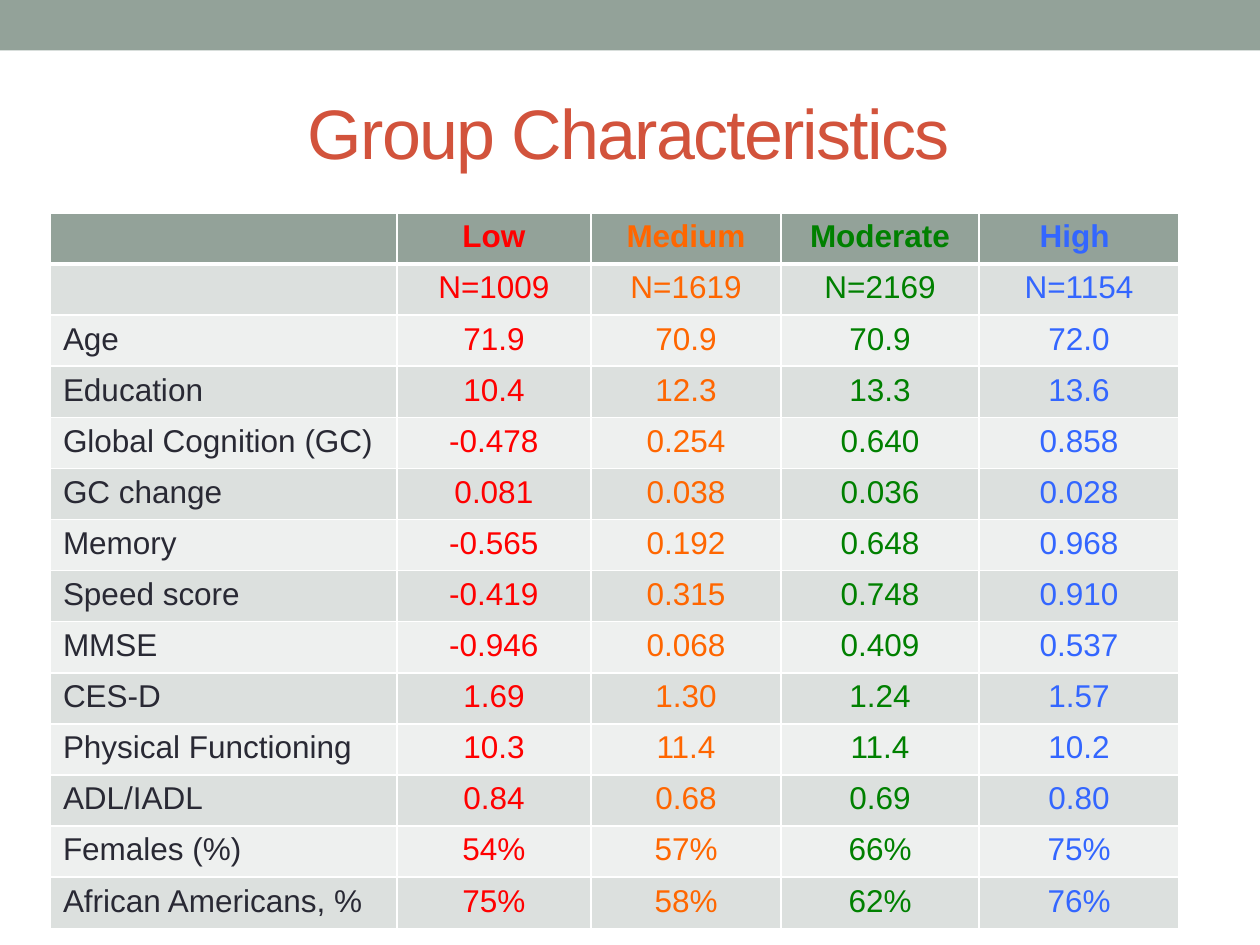
from dataclasses import dataclass

import lxml.etree
import pptx
import pptx.dml.color
import pptx.enum.shapes
import pptx.enum.text
import pptx.oxml.ns
import pptx.util
from pptx.util import Inches


@dataclass(frozen=True)
class Theme:
    font: str = "Arial"
    title_size: int = 40
    table_size: int = 18
    title: str = "D2533C"
    text: str = "292934"
    accent: str = "93A299"
    bands: tuple[str, str] = ("DCE0DE", "EEF0EF")
    border: str = "FFFFFF"
    border_width: float = 1
    header_border_width: float = 3


@dataclass(frozen=True)
class Column:
    heading: str
    width: float
    color: str


@dataclass(frozen=True)
class Measure:
    label: str
    values: tuple[str, str, str, str]


THEME = Theme()

COLUMNS = [
    Column("", 2.75, THEME.text),
    Column("Low", 1.54, "FF0000"),
    Column("Medium", 1.51, "FF6600"),
    Column("Moderate", 1.57, "008000"),
    Column("High ", 1.59, "3366FF"),
]

MEASURES = [
    Measure("", ("N=1009", "N=1619", "N=2169", "N=1154")),
    Measure("Age", ("71.9", "70.9", "70.9", "72.0")),
    Measure("Education", ("10.4", "12.3", "13.3", "13.6")),
    Measure("Global Cognition (GC)", ("-0.478", "0.254", "0.640", "0.858")),
    Measure("GC change", ("0.081", "0.038", "0.036", "0.028")),
    Measure("Memory", ("-0.565", "0.192", "0.648", "0.968")),
    Measure("Speed score", ("-0.419", "0.315", "0.748", "0.910")),
    Measure("MMSE", ("-0.946", "0.068", "0.409", "0.537")),
    Measure("CES-D", ("1.69", "1.30", "1.24", "1.57")),
    Measure("Physical Functioning", ("10.3", "11.4", "11.4", "10.2")),
    Measure("ADL/IADL", ("0.84", "0.68", "0.69", "0.80")),
    Measure("Females (%)", ("54%", "57%", "66%", "75%")),
    Measure("African Americans, %", ("75%", "58%", "62%", "76%")),
]


def rgb(color: str) -> pptx.dml.color.RGBColor:
    return pptx.dml.color.RGBColor.from_string(color)


def add_run(p, text: str, size: float, color: str, bold: bool = False):
    r = p.add_run()
    r.text = text
    r.font.name = THEME.font
    r.font.size = pptx.util.Pt(size)
    r.font.bold = bold
    r.font.color.rgb = rgb(color)
    return r


def add_top_bar(slide) -> None:
    sp = slide.shapes.add_shape(
        pptx.enum.shapes.MSO_SHAPE.RECTANGLE, 0, 0, Inches(10), Inches(0.4)
    )
    sp.shadow.inherit = False
    sp.fill.solid()
    sp.fill.fore_color.rgb = rgb(THEME.accent)
    sp.line.fill.background()


def add_title(slide, text: str) -> None:
    sp = slide.shapes.add_textbox(Inches(0.49), Inches(0.5), Inches(9), Inches(1.08))
    tf = sp.text_frame
    tf.word_wrap = True
    tf.vertical_anchor = pptx.enum.text.MSO_ANCHOR.MIDDLE
    p = tf.paragraphs[0]
    p.alignment = pptx.enum.text.PP_ALIGN.CENTER
    r = add_run(p, text, THEME.title_size, THEME.title)
    r.font._element.set("spc", "-100")


def set_borders(cell, top: float, bottom: float) -> None:
    qn = pptx.oxml.ns.qn
    side = THEME.border_width
    widths = {"a:lnL": side, "a:lnR": side, "a:lnT": top, "a:lnB": bottom}
    tc_pr = cell._tc.get_or_add_tcPr()
    for i, (tag, width) in enumerate(widths.items()):
        ln = lxml.etree.Element(qn(tag), w=str(pptx.util.Pt(width)))
        fill = lxml.etree.SubElement(ln, qn("a:solidFill"))
        lxml.etree.SubElement(fill, qn("a:srgbClr"), val=THEME.border)
        tc_pr.insert(i, ln)


def fill_cell(cell, text: str, row: int, col: int) -> None:
    header = row == 0
    cell.fill.solid()
    cell.fill.fore_color.rgb = rgb(THEME.accent if header else THEME.bands[(row - 1) % 2])
    set_borders(
        cell,
        top=THEME.header_border_width if row == 1 else THEME.border_width,
        bottom=THEME.header_border_width if header else THEME.border_width,
    )
    if text:
        p = cell.text_frame.paragraphs[0]
        if col > 0:
            p.alignment = pptx.enum.text.PP_ALIGN.CENTER
        add_run(p, text, THEME.table_size, COLUMNS[col].color, bold=header)


def add_group_table(slide) -> None:
    rows = [[c.heading for c in COLUMNS]] + [[m.label, *m.values] for m in MEASURES]
    table = slide.shapes.add_table(
        len(rows), len(COLUMNS), Inches(0.4), Inches(1.69), Inches(8.97), Inches(5.68)
    ).table
    table.first_row = False
    table.horz_banding = False
    for col, column in enumerate(COLUMNS):
        table.columns[col].width = Inches(column.width)
    for row, texts in enumerate(rows):
        for col, text in enumerate(texts):
            fill_cell(table.cell(row, col), text, row, col)


def main() -> None:
    prs = pptx.Presentation()
    prs.slide_width = Inches(10)
    prs.slide_height = Inches(7.5)
    slide = prs.slides.add_slide(prs.slide_layouts[6])
    add_top_bar(slide)
    add_title(slide, "Group Characteristics")
    add_group_table(slide)
    prs.save("out.pptx")


if __name__ == "__main__":
    main()
